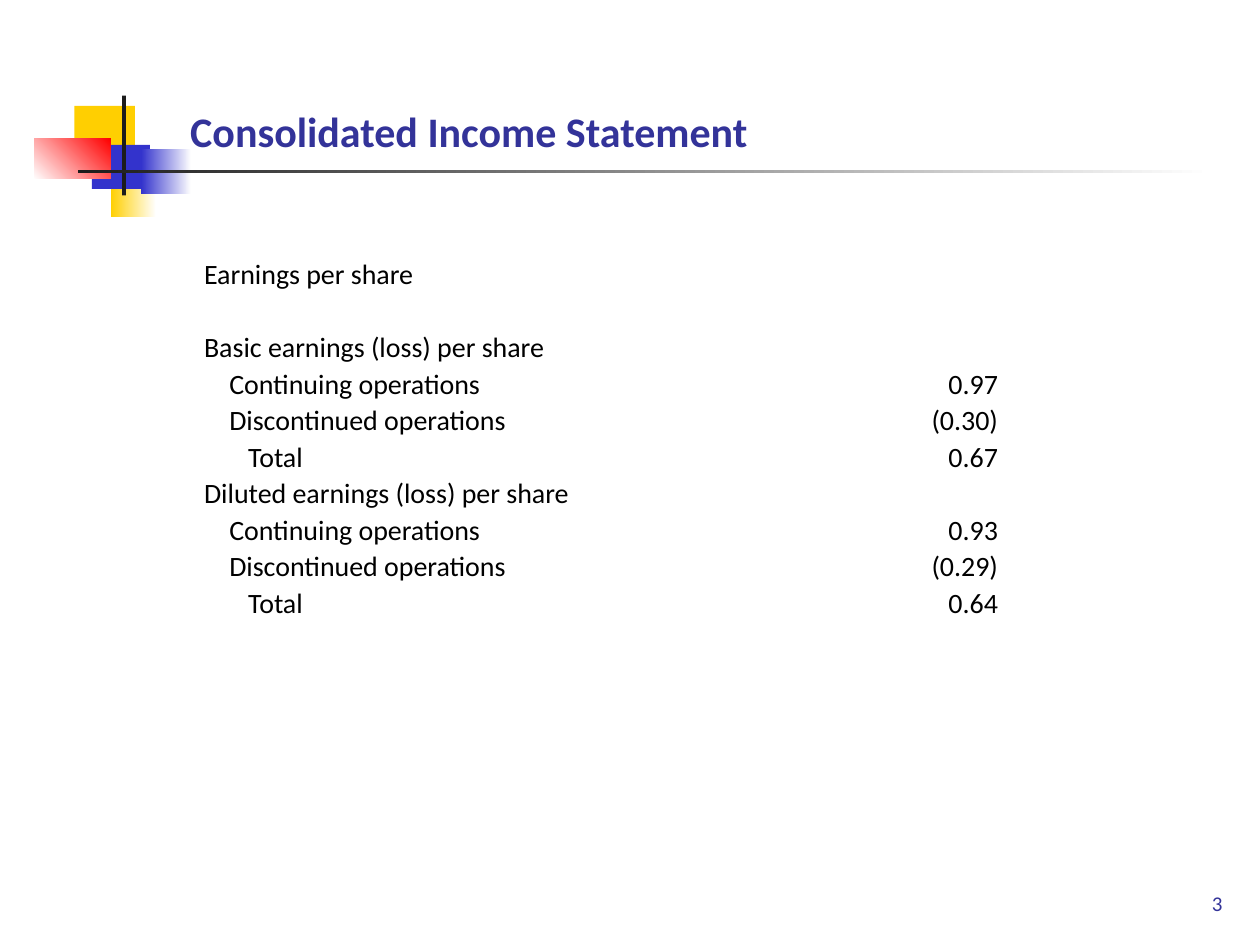
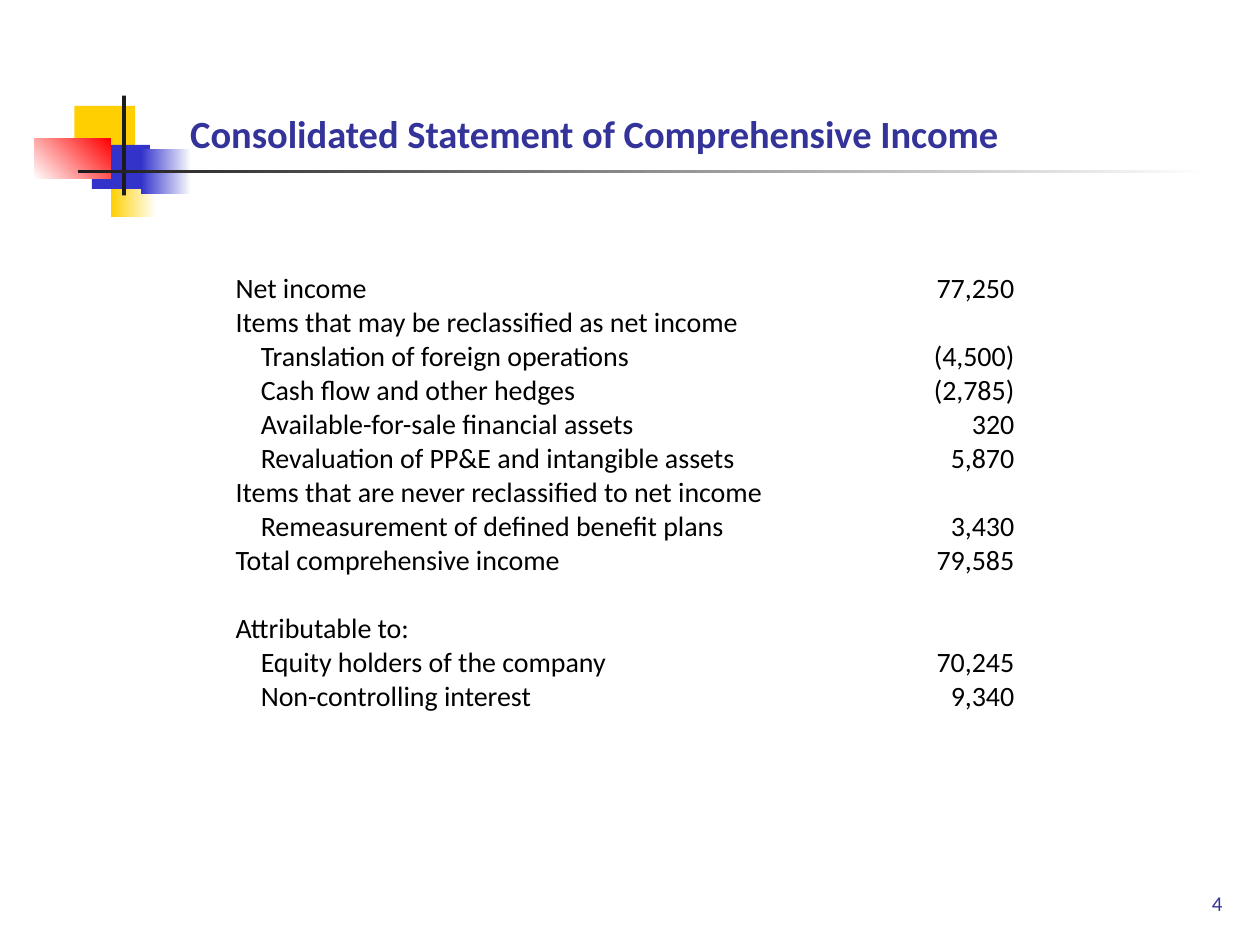
from lxml import etree
from pptx import Presentation
from pptx.dml.color import RGBColor
from pptx.enum.shapes import MSO_SHAPE
from pptx.enum.text import MSO_ANCHOR, MSO_AUTO_SIZE, PP_ALIGN
from pptx.oxml.ns import qn
from pptx.util import Inches, Pt

RECTANGLE = MSO_SHAPE.RECTANGLE
TOP, BOTTOM = MSO_ANCHOR.TOP, MSO_ANCHOR.BOTTOM
LEFT, RIGHT = PP_ALIGN.LEFT, PP_ALIGN.RIGHT
NO_AUTOFIT = MSO_AUTO_SIZE.NONE

NAVY = RGBColor(0x33, 0x33, 0x99)
BLUE = RGBColor(0x33, 0x33, 0xCC)
YELLOW = RGBColor(0xFF, 0xCF, 0x01)
RED = RGBColor(0xFF, 0x00, 0x00)
CHARCOAL = RGBColor(0x1C, 0x1C, 0x1C)
WHITE = RGBColor(0xFF, 0xFF, 0xFF)
BLACK = RGBColor(0x00, 0x00, 0x00)

FONT = "Calibri"
TABLE_SIZE = 16
CELL_MARGIN = 0.07
INDENTS = (0, 0.2, 0.35)

# Box, colours (one is solid, two make a gradient), gradient angle
EMBLEM = [
    ((0.88, 1.2, 0.36, 0.52), (YELLOW, WHITE), 0),
    ((0.59, 0.84, 0.48, 0.35), (YELLOW,), 0),
    ((0.73, 1.15, 0.46, 0.35), (BLUE,), 0),
    ((1.12, 1.18, 0.4, 0.36), (BLUE, WHITE), 0),
    ((0.27, 1.1, 0.61, 0.32), (WHITE, RED), 45),
    ((0.97, 0.76, 0.03, 0.79), (CHARCOAL,), 0),
    ((0.62, 1.35, 9, 0.02), (CHARCOAL, WHITE), 0),
]

# Label, value, indent level
EARNINGS_PER_SHARE = [
    ("Earnings per share", "", 0),
    ("Basic earnings (loss) per share", "", 0),
    ("Continuing operations", "0.97", 1),
    ("Discontinued operations", "(0.30)", 1),
    ("Total", "0.67", 2),
    ("Diluted earnings (loss) per share", "", 0),
    ("Continuing operations", "0.93", 1),
    ("Discontinued operations", "(0.29)", 1),
    ("Total", "0.64", 2),
]
COMPREHENSIVE_INCOME = [
    ("", "", 0),
    ("Net income", "77,250", 0),
    ("Items that may be reclassified as net income", "", 0),
    ("Translation of foreign operations", "(4,500)", 1),
    ("Cash flow and other hedges", "(2,785)", 1),
    ("Available-for-sale financial assets", "320", 1),
    ("Revaluation of PP&E and intangible assets", "5,870", 1),
    ("Items that are never reclassified to net income", "", 0),
    ("Remeasurement of defined benefit plans", "3,430", 1),
    ("Total comprehensive income", "79,585", 0),
    ("", "", 0),
    ("Attributable to:", "", 0),
    ("Equity holders of the company", "70,245", 1),
    ("Non-controlling interest", "9,340", 1),
]


def format_paragraph(paragraph, size, color, alignment=LEFT, bold=False):
    paragraph.alignment = alignment
    font = paragraph.font
    font.name, font.size, font.bold = FONT, Pt(size), bold
    font.color.rgb = color


def add_emblem(slide):
    for box, colors, angle in EMBLEM:
        shape = slide.shapes.add_shape(RECTANGLE, *map(Inches, box))
        shape.shadow.inherit = False
        shape.line.fill.background()
        if len(colors) == 1:
            shape.fill.solid()
            shape.fill.fore_color.rgb = colors[0]
        else:
            shape.fill.gradient()
            shape.fill.gradient_angle = angle
            for stop, color in zip(shape.fill.gradient_stops, colors):
                stop.color.rgb = color


def place_title(slide, text, box, size):
    title = slide.shapes.title
    title.left, title.top, title.width, title.height = map(Inches, box)
    frame = title.text_frame
    frame.text = text
    frame.word_wrap = True
    frame.auto_size = NO_AUTOFIT
    frame.vertical_anchor = BOTTOM
    format_paragraph(frame.paragraphs[0], size, NAVY, bold=True)
    title.element.getparent().append(title.element)  # in front of the emblem


def add_page_number(slide, number):
    box = slide.shapes.add_textbox(Inches(7.52), Inches(6.82), Inches(2.28), Inches(0.5))
    frame = box.text_frame
    frame.word_wrap = True
    frame.vertical_anchor = BOTTOM
    frame.text = str(number)
    format_paragraph(frame.paragraphs[0], 12, NAVY, RIGHT)


def fill_cell(cell, text, alignment, indent, line_spacing):
    cell.fill.background()
    cell.vertical_anchor = TOP
    cell.margin_left = Inches(CELL_MARGIN + indent)
    cell.margin_right = Inches(CELL_MARGIN)
    cell.margin_top = cell.margin_bottom = 0
    paragraph = cell.text_frame.paragraphs[0]
    paragraph.line_spacing = line_spacing
    format_paragraph(paragraph, TABLE_SIZE, BLACK, alignment)
    if text:
        paragraph.add_run().text = text
    else:  # keeps an empty cell from stretching its row
        etree.SubElement(paragraph._p, qn("a:endParaRPr"), sz=str(TABLE_SIZE * 100))


def add_statement(slide, left, top, column_widths, rows, row_height,
                  first_height, line_spacing):
    """Table with labels in its first column and values in its last."""
    heights = [first_height] + [row_height] * (len(rows) - 1)
    table = slide.shapes.add_table(
        len(rows), len(column_widths), Inches(left), Inches(top),
        Inches(sum(column_widths)), Inches(sum(heights))).table
    table.first_row = table.horz_banding = False
    for column, width in zip(table.columns, column_widths):
        column.width = Inches(width)
    blanks = [""] * (len(column_widths) - 2)
    for row, height, (label, value, level) in zip(table.rows, heights, rows):
        row.height = Inches(height)
        for index, (cell, text) in enumerate(zip(row.cells, [label, *blanks, value])):
            if index == 0:
                fill_cell(cell, text, LEFT, INDENTS[level], line_spacing)
            else:
                fill_cell(cell, text, RIGHT, 0, line_spacing)
    return table


def add_statement_slide(presentation, number, title, title_box, title_size):
    slide = presentation.slides.add_slide(presentation.slide_layouts[5])
    add_emblem(slide)
    place_title(slide, title, title_box, title_size)
    add_page_number(slide, number)
    return slide


def main():
    presentation = Presentation()
    presentation.slide_width, presentation.slide_height = Inches(10), Inches(7.5)

    slide = add_statement_slide(presentation, 3, "Consolidated Income Statement",
                                (1.41, 0.65, 6.74, 0.64), 24)
    add_statement(slide, 1.55, 2.03, (4.55, 0.59, 1.3), EARNINGS_PER_SHARE,
                  row_height=0.29, first_height=0.58, line_spacing=1.07)

    slide = add_statement_slide(presentation, 4,
                                "Consolidated Statement of Comprehensive Income",
                                (1.41, 0.45, 8.52, 0.84), 22)
    table = add_statement(slide, 1.8, 1.88, (5.04, 1.28), COMPREHENSIVE_INCOME,
                          row_height=0.27, first_height=0.28, line_spacing=1.0)
    table.cell(0, 0).merge(table.cell(0, 1))

    presentation.save("out.pptx")


if __name__ == "__main__":
    main()
